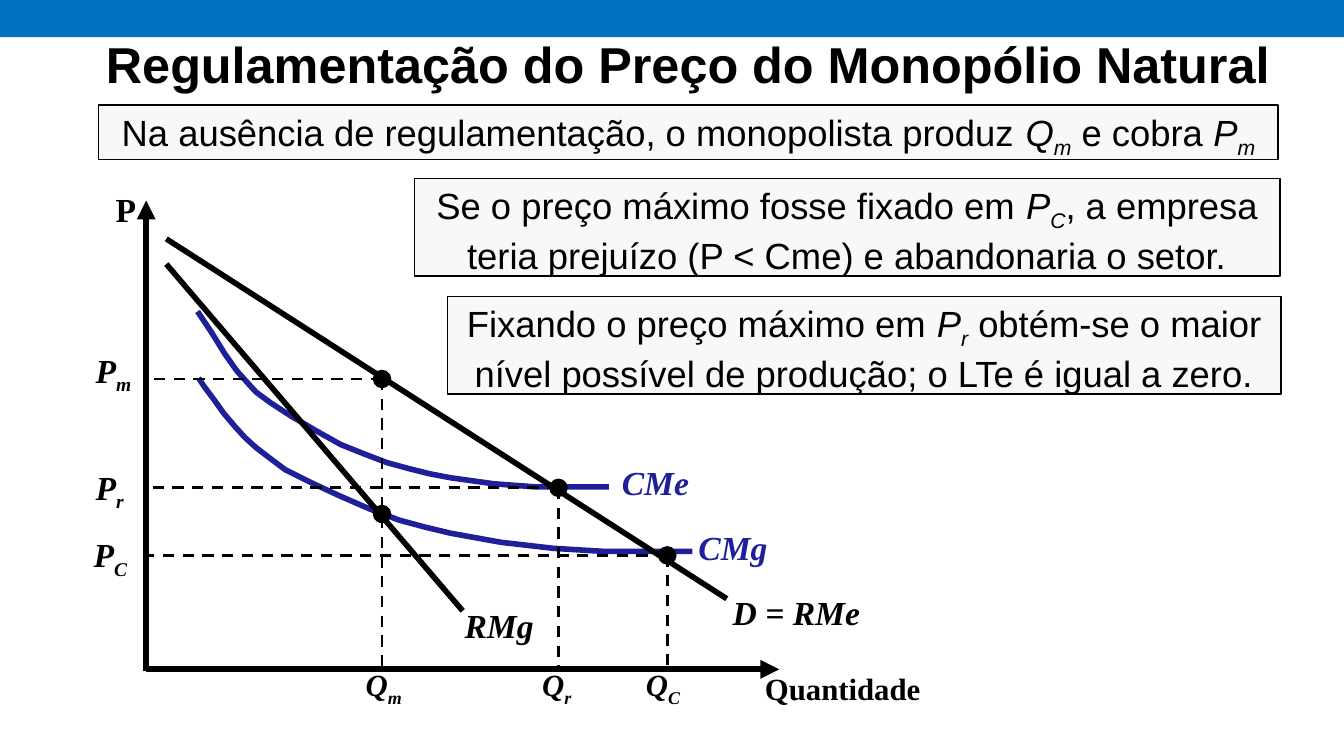
import dataclasses

import pptx
import pptx.dml.color
import pptx.enum.dml
import pptx.enum.shapes
import pptx.enum.text
import pptx.oxml
import pptx.oxml.ns
import pptx.util

Align = pptx.enum.text.PP_ALIGN
Anchor = pptx.enum.text.MSO_ANCHOR
Fit = pptx.enum.text.MSO_AUTO_SIZE
Form = pptx.enum.shapes.MSO_SHAPE
DASH = pptx.enum.dml.MSO_LINE.DASH
COLS, ROWS = 133.33, 75


@dataclasses.dataclass(frozen=True)
class Theme:
    ink: str = "000000"
    curve: str = "1F1F99"
    band: str = "0070C0"
    panel: str = "F8F8F8"
    sans: str = "Arial"
    serif: str = "Times New Roman"
    title: int = 36
    note: int = 26
    label: int = 24
    small: int = 22
    axis: float = 4.5
    plot: float = 4
    guide: float = 2
    edge: float = 1


def cell(value):
    return pptx.util.Inches(value / 10)


def color(code):
    return pptx.dml.color.RGBColor.from_string(code)


def node(tag, **attrs):
    item = pptx.oxml.parse_xml(f"<a:{tag} {pptx.oxml.ns.nsdecls('a')}/>")
    for name, value in attrs.items():
        item.set(name, value)
    return item


class Board:
    def __init__(self, deck, theme):
        self.theme = theme
        self.slide = deck.slides.add_slide(deck.slide_layouts[5])
        self.shapes = self.slide.shapes

    def font(self, para, size, face, code=None, bold=False, italic=False):
        font = para.font
        font.size = pptx.util.Pt(size)
        font.name = face
        font.bold = bold
        font.italic = italic
        font.color.rgb = color(code or self.theme.ink)

    def runs(self, para, parts):
        for text, style in parts:
            run = para.add_run()
            run.text = text
            if "i" in style:
                run.font.italic = True
            if "s" in style:
                run._r.get_or_add_rPr().set("baseline", "-25000")

    def stroke(self, line, code, width):
        line.color.rgb = color(code)
        line.width = pptx.util.Pt(width)

    def title(self, text, *area):
        shape = self.shapes.title
        shape.left, shape.top, shape.width, shape.height = map(cell, area)
        frame = shape.text_frame
        frame.text = text
        frame.auto_size = Fit.NONE
        frame.vertical_anchor = Anchor.BOTTOM
        para = frame.paragraphs[0]
        para.alignment = Align.LEFT
        self.font(para, self.theme.title, self.theme.sans, bold=True)

    def solid(self, form, fill, edge, *area):
        shape = self.shapes.add_shape(form, *map(cell, area))
        shape.shadow.inherit = False
        shape.fill.solid()
        shape.fill.fore_color.rgb = color(fill)
        if edge:
            self.stroke(shape.line, edge, self.theme.edge)
        else:
            shape.line.fill.background()
        return shape

    def note(self, parts, *area):
        theme = self.theme
        frame = self.solid(Form.RECTANGLE, theme.panel, theme.ink, *area).text_frame
        frame.word_wrap = True
        frame.auto_size = Fit.SHAPE_TO_FIT_TEXT
        frame.vertical_anchor = Anchor.TOP
        para = frame.paragraphs[0]
        para.alignment = Align.CENTER
        self.font(para, theme.note, theme.sans)
        self.runs(para, parts)

    def label(self, parts, x, y, wide, size=None, code=None, italic=True):
        size = size or self.theme.label
        high = 5 if size == self.theme.label else 4.7
        box = self.shapes.add_textbox(*map(cell, (x, y, wide, high)))
        frame = box.text_frame
        frame.word_wrap = False
        frame.auto_size = Fit.SHAPE_TO_FIT_TEXT
        para = frame.paragraphs[0]
        para.alignment = Align.LEFT
        self.font(para, size, self.theme.serif, code, True, italic)
        self.runs(para, parts)

    def line(self, start, end, width, dash=None, arrow=False):
        kind = pptx.enum.shapes.MSO_CONNECTOR.STRAIGHT
        link = self.shapes.add_connector(kind, *map(cell, (*start, *end)))
        self.stroke(link.line, self.theme.ink, width)
        if dash:
            link.line.dash_style = dash
        if arrow:
            link.line._get_or_add_ln().append(node("tailEnd", type="triangle"))
        link._element.spPr.append(node("effectLst"))

    def curve(self, points):
        spots = [(cell(x), cell(y)) for x, y in points]
        path = self.shapes.build_freeform(*spots[0])
        path.add_line_segments(spots[1:], close=False)
        shape = path.convert_to_shape()
        shape.shadow.inherit = False
        shape.fill.background()
        self.stroke(shape.line, self.theme.curve, self.theme.plot)

    def dot(self, x, y, size=1.7):
        ink = self.theme.ink
        self.solid(Form.OVAL, ink, ink, x - size / 2, y - size / 2, size, size)


MEAN = [(19.6, 30.9), (20.2, 31.8), (21, 33), (22.3, 35.1), (23.5, 36.8),
        (24.4, 37.8), (25.4, 38.9), (26.9, 40), (28.9, 41.3), (31.3, 42.7),
        (33.8, 44.1), (36.3, 45.1), (38.4, 45.9), (40.6, 46.5), (42.6, 47),
        (44.7, 47.4), (49, 48), (53.1, 48.3), (57.1, 48.3), (60.4, 48.3)]
MARGIN = [(19.7, 37.5), (20.3, 38.4), (21.2, 39.6), (22.2, 41), (23.3, 42.3),
          (24.3, 43.4), (25.4, 44.4), (26.7, 45.4), (28.3, 46.6), (30.7, 47.8),
          (33.7, 49.2), (36.7, 50.5), (39.6, 51.6), (42.2, 52.3), (44.7, 52.9),
          (49.7, 53.8), (54.9, 54.4), (59.9, 54.7), (64.8, 54.7), (68.7, 54.7)]
LEFT, BASE = 14.5, 66.4
WIDE = 7
POINTS = [("m", 37.9, 37.6, (8.5, 34.2), 35.3),
          ("r", 55.4, 48.4, (8.5, 45.8), 52.8),
          ("C", 66.2, 55.1, (8.3, 52.5), 63.1)]


def main():
    deck = pptx.Presentation()
    deck.slide_width, deck.slide_height = cell(COLS), cell(ROWS)
    theme = Theme()
    board = Board(deck, theme)

    board.solid(Form.RECTANGLE, theme.band, None, 0, 0, COLS, 3.7)
    board.title("Regulamentação do Preço do Monopólio Natural", 9.5, 1.2, 118.1, 8.6)

    board.curve(MARGIN)
    board.curve(MEAN)
    board.line((LEFT, BASE + 0.2), (LEFT, 19.9), theme.axis, arrow=True)
    board.line((LEFT, BASE), (77.3, BASE), theme.axis, arrow=True)
    board.line((16.5, 23.7), (72.1, 59.4), theme.plot)
    board.line((16.5, 26.2), (45.9, 60.6), theme.plot)

    board.label([("CMg", "")], 68.3, 51.8, 8.9, code=theme.curve)
    board.label([("CMe", "")], 60.7, 45.3, 8.7, code=theme.curve)
    board.label([("D = RMe", "")], 71.7, 58.2, 14.7)
    board.label([("RMg", "")], 45.1, 59.5, 8.9)
    board.label([("P", "")], 10.5, 18.3, 4, italic=False)
    board.label([("Quantidade", "")], 74.9, 65.9, 17.6, theme.small, italic=False)

    for sub, x, y, spot, foot in POINTS:
        board.line((x, y), (LEFT, y), theme.guide, DASH)
        board.line((x, y), (x, BASE), theme.guide, DASH)
        board.dot(x, y)
        board.label([("P", ""), (sub, "s")], *spot, WIDE)
        board.label([("Q", ""), (sub, "s")], foot, 65.6, WIDE, theme.small)
    board.dot(37.9, 51)

    board.note([("Na ausência de regulamentação, o monopolista produz ", ""),
                ("Q", "i"), ("m", "is"), (" e cobra ", ""),
                ("P", "i"), ("m", "is")], 9.8, 10.4, 117, 5.4)
    board.note([("Se o preço máximo fosse fixado em ", ""),
                ("P", "i"), ("C", "is"),
                (", a empresa teria prejuízo (P < Cme) e abandonaria o setor.", "")],
               41.1, 17.7, 85.9, 9.7)
    board.note([("Fixando o preço máximo em ", ""),
                ("P", "i"), ("r", "is"),
                (" obtém-se o maior nível possível de produção; o LTe é igual a zero.", "")],
               44.4, 29.4, 82.7, 9.7)

    deck.save("out.pptx")


if __name__ == "__main__":
    main()
